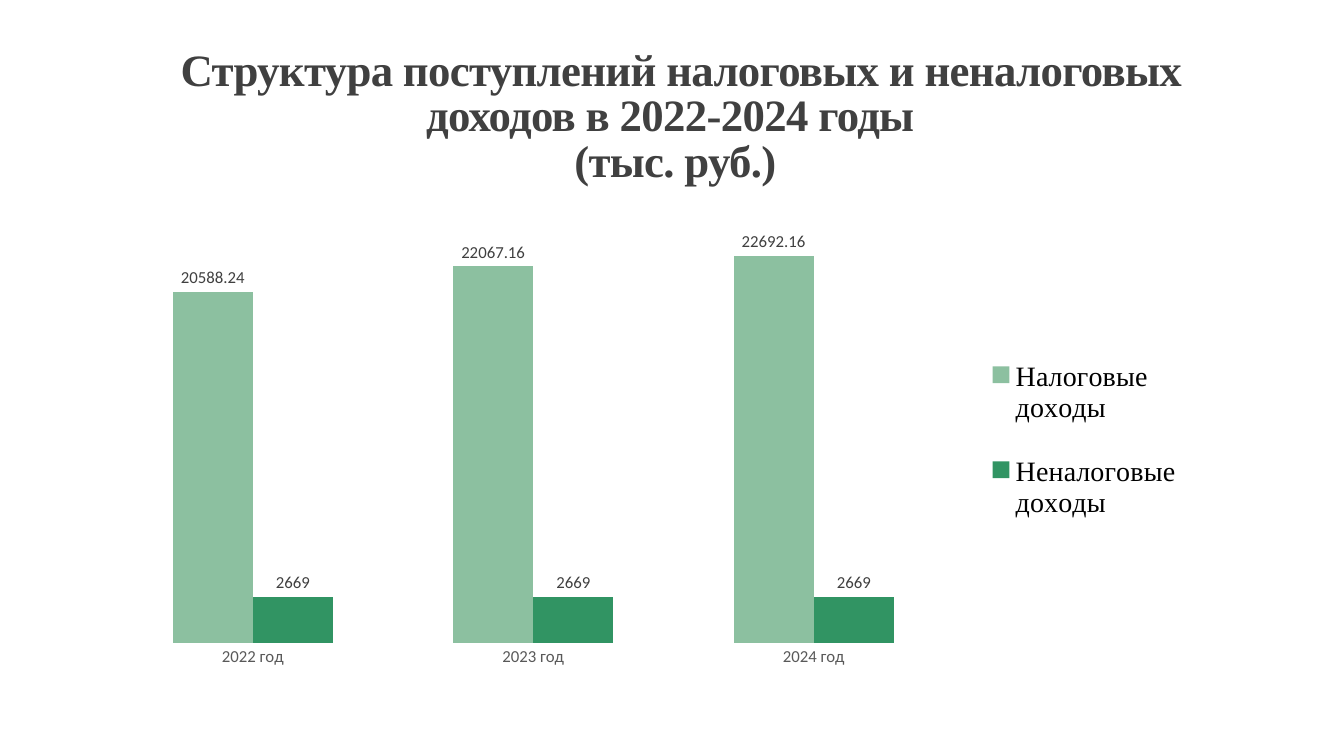
from lxml.etree import SubElement
from pptx import Presentation
from pptx.chart.data import CategoryChartData
from pptx.dml.color import RGBColor
from pptx.enum.chart import XL_CHART_TYPE, XL_LABEL_POSITION, XL_LEGEND_POSITION, XL_TICK_MARK
from pptx.enum.text import MSO_ANCHOR, PP_ALIGN
from pptx.oxml.ns import qn
from pptx.util import Cm, Pt


def style_font(font, name, size, color, bold=False):
    look = {"name": name, "size": Pt(size), "bold": bold}
    for attribute, value in look.items():
        setattr(font, attribute, value)
    font.color.rgb = RGBColor.from_string(color)


def place_in_chart(part, index, box, inner=False):
    """Fix a chart part at (x, y, w, h), given as fractions of the chart."""
    for old_layout in part.findall(qn("c:layout")):
        part.remove(old_layout)
    layout = SubElement(part, qn("c:layout"))
    part.insert(index, layout)
    manual = SubElement(layout, qn("c:manualLayout"))
    settings = [("layoutTarget", "inner")] if inner else []
    settings += [("xMode", "edge"), ("yMode", "edge"), *zip("xywh", box)]
    for tag, value in settings:
        SubElement(manual, qn(f"c:{tag}")).set("val", str(value))


prs = Presentation()
prs.slide_width, prs.slide_height = Cm(33.87), Cm(19.05)
slide = prs.slides.add_slide(prs.slide_layouts[6])

# Heading
heading = slide.shapes.add_textbox(Cm(3.05), Cm(0.79), Cm(27.94), Cm(4.04)).text_frame
heading.word_wrap = True
heading.vertical_anchor = MSO_ANCHOR.BOTTOM
heading_line = heading.paragraphs[0]
heading_line.text = " Структура поступлений налоговых и неналоговых доходов в 2022-2024 годы \v(тыс. руб.)"
heading_line.alignment = PP_ALIGN.CENTER
heading_line.line_spacing = 0.85
for run in heading_line.runs:
    style_font(run.font, "Times New Roman", 32, "404040", bold=True)
    run.font._element.set("spc", "-50")

# Revenue chart; the empty fourth category leaves room for the legend
revenue_data = CategoryChartData()
revenue_data.categories = ["2022 год", "2023 год", "2024 год", ""]
revenue_data.add_series("Налоговые доходы", [20588.24, 22067.16, 22692.16, None])
revenue_data.add_series("Неналоговые доходы", [2669, 2669, 2669, None])
revenue = slide.shapes.add_chart(
    XL_CHART_TYPE.COLUMN_CLUSTERED, Cm(1.78), Cm(5.31), Cm(29.36), Cm(11.91), revenue_data
).chart
revenue.has_title = False
style_font(revenue.font, "Calibri", 10, "000000")

columns = revenue.plots[0]
columns.gap_width = 150
columns.overlap = 0
columns.vary_by_categories = False
for income, color in zip(columns.series, ["8CC0A0", "319463"]):
    income.format.fill.solid()
    income.format.fill.fore_color.rgb = RGBColor.from_string(color)
    labels = income.data_labels
    labels.show_value = True
    labels.position = XL_LABEL_POSITION.OUTSIDE_END
    style_font(labels.font, "Calibri", 12, "404040")

years = revenue.category_axis
years.major_tick_mark = XL_TICK_MARK.NONE
years.format.line.fill.background()
style_font(years.tick_labels.font, "Calibri", 12, "595959")

amounts = revenue.value_axis
amounts.minimum_scale, amounts.maximum_scale = 0, 25000
amounts.has_major_gridlines = False
amounts.visible = False

revenue.has_legend = True
legend = revenue.legend
legend.position = XL_LEGEND_POSITION.BOTTOM
legend.include_in_layout = False
style_font(legend.font, "Times New Roman", 20, "000000")

plot_area = revenue._chartSpace.chart.plotArea
place_in_chart(plot_area, 0, (0.036, 0.012, 0.963, 0.902), inner=True)
place_in_chart(legend._element, 1, (0.77, 0.25, 0.2, 0.47))

prs.save("out.pptx")
